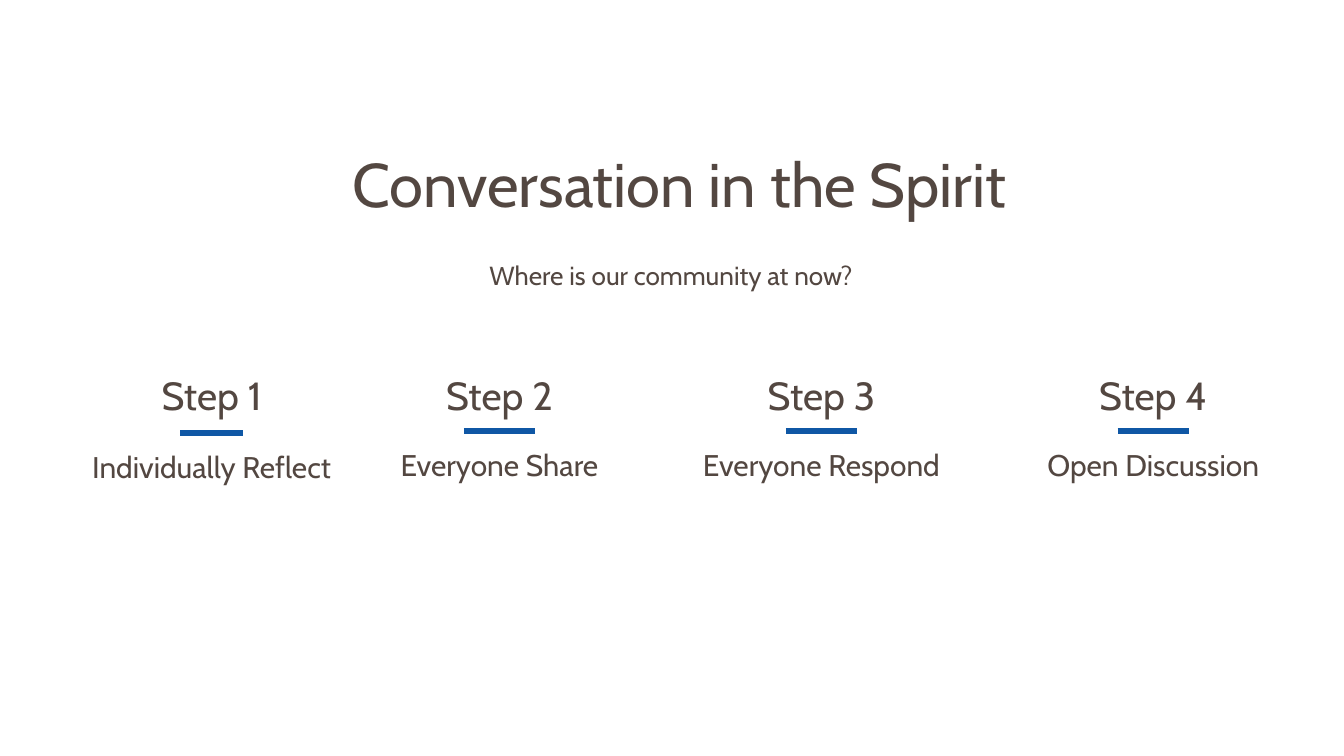
from lxml import etree
from pptx import Presentation
from pptx import util as u
from pptx.dml.color import RGBColor
from pptx.enum import shapes, text
from pptx.oxml.ns import qn

BROWN = RGBColor(0x53, 0x47, 0x41)
BLUE = RGBColor(0x0F, 0x57, 0xA5)
WHITE = RGBColor(0xFF, 0xFF, 0xFF)


class SlideBuilder:
    font_name = "Cabin"

    def __init__(self, slide):
        self.slide = slide

    def set_text(self, shape, words, size, spacing):
        frame = shape.text_frame
        frame.text = words
        frame.word_wrap = True
        frame.auto_size = text.MSO_AUTO_SIZE.NONE
        frame.vertical_anchor = text.MSO_ANCHOR.TOP
        frame.margin_left = frame.margin_right = 0
        frame.margin_top = frame.margin_bottom = 0
        paragraph = frame.paragraphs[0]
        paragraph.alignment = text.PP_ALIGN.CENTER
        paragraph.line_spacing = u.Pt(spacing)
        paragraph.space_before = u.Pt(0)
        paragraph.font.name = self.font_name
        paragraph.font.size = u.Pt(size)
        paragraph.font.color.rgb = BROWN

    def placeholder(self, index, words, left, top, width, height, size, spacing):
        shape = self.slide.placeholders[index]
        shape.left, shape.top = u.Cm(left), u.Cm(top)
        shape.width, shape.height = u.Cm(width), u.Cm(height)
        self.set_text(shape, words, size, spacing)

    def label(self, words, center, top, width, height, size, spacing):
        shape = self.slide.shapes.add_textbox(
            u.Cm(center - width / 2), u.Cm(top), u.Cm(width), u.Cm(height))
        self.set_text(shape, words, size, spacing)

    def bar(self, center, y, width):
        line = self.slide.shapes.add_connector(
            shapes.MSO_CONNECTOR.STRAIGHT,
            u.Cm(center - width / 2), u.Cm(y), u.Cm(center + width / 2), u.Cm(y))
        line.line.color.rgb = BLUE
        line.line.width = u.Pt(6.92)
        properties = line._element.find(qn("p:spPr"))
        etree.SubElement(properties, qn("a:effectLst"))

    def step(self, heading, caption, center, scale, drop):
        self.label(heading, center, 14.3, 7.06 * scale, 1.55, 42, 43.1)
        self.label(caption, center, 16.71 + drop, 10.69 * scale, 1.48, 32, 43.6)
        self.bar(center, 16.3 + drop, 2.69 * scale)


def main():
    presentation = Presentation()
    presentation.slide_width = u.Cm(50.8)
    presentation.slide_height = u.Cm(28.58)
    slide = presentation.slides.add_slide(presentation.slide_layouts[0])
    slide.background.fill.solid()
    slide.background.fill.fore_color.rgb = WHITE
    builder = SlideBuilder(slide)

    # Title and question
    builder.placeholder(0, "Conversation in the Spirit",
                        12.8, 5.94, 25.78, 2.41, 66, 67.2)
    builder.placeholder(1, "Where is our community at now?",
                        11.13, 9.88, 28.45, 1.14, 28, 31.5)

    # Steps: caption, centre, width scale, drop below the common line
    steps = [
        ("Individually Reflect", 8, 0.88, 0.07),
        ("Everyone Share", 18.88, 1, 0),
        ("Everyone Respond", 31.05, 1, 0),
        ("Open Discussion", 43.59, 1, 0),
    ]
    for number, (caption, center, scale, drop) in enumerate(steps, start=1):
        builder.step(f"Step {number}", caption, center, scale, drop)

    presentation.save("out.pptx")


if __name__ == "__main__":
    main()
